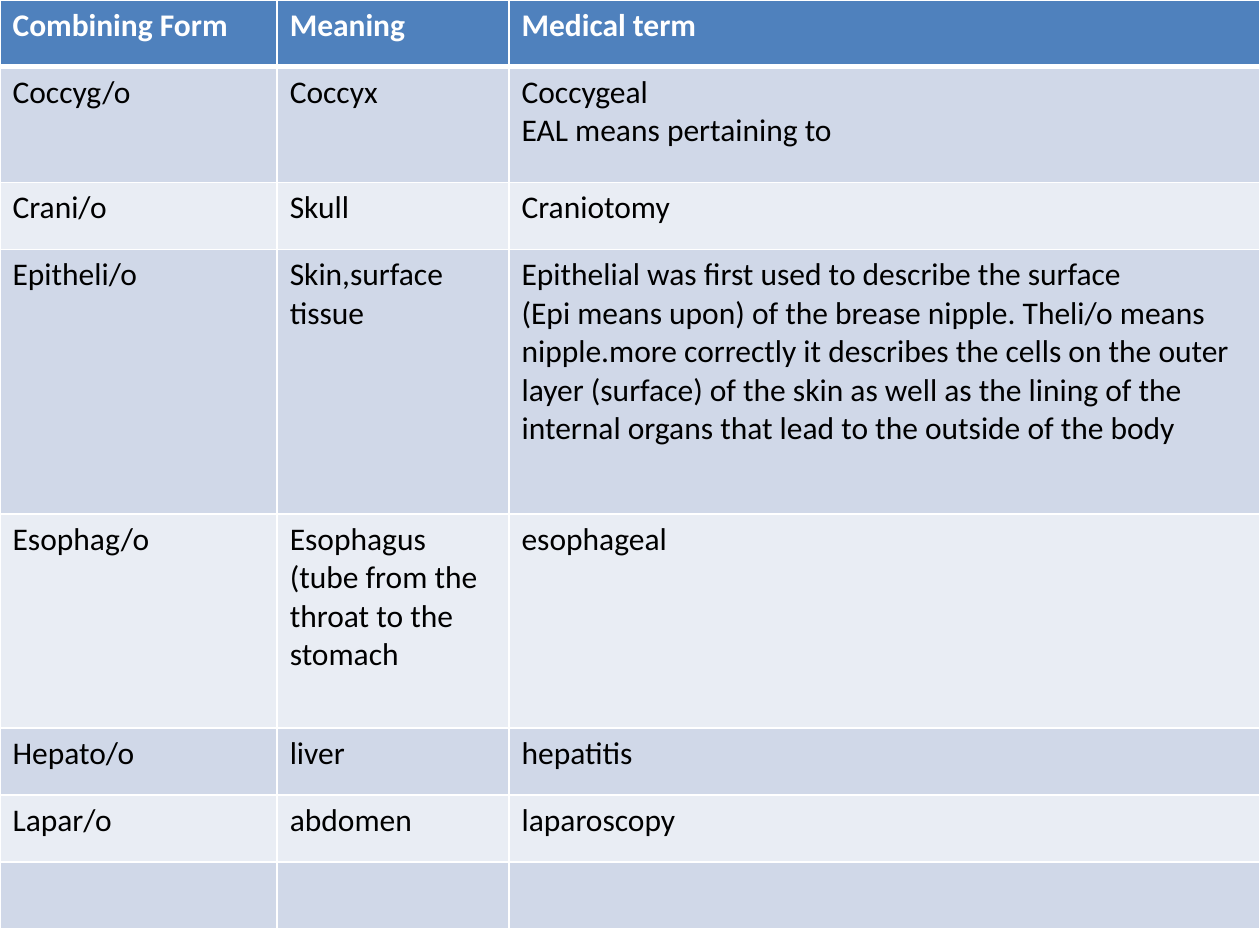
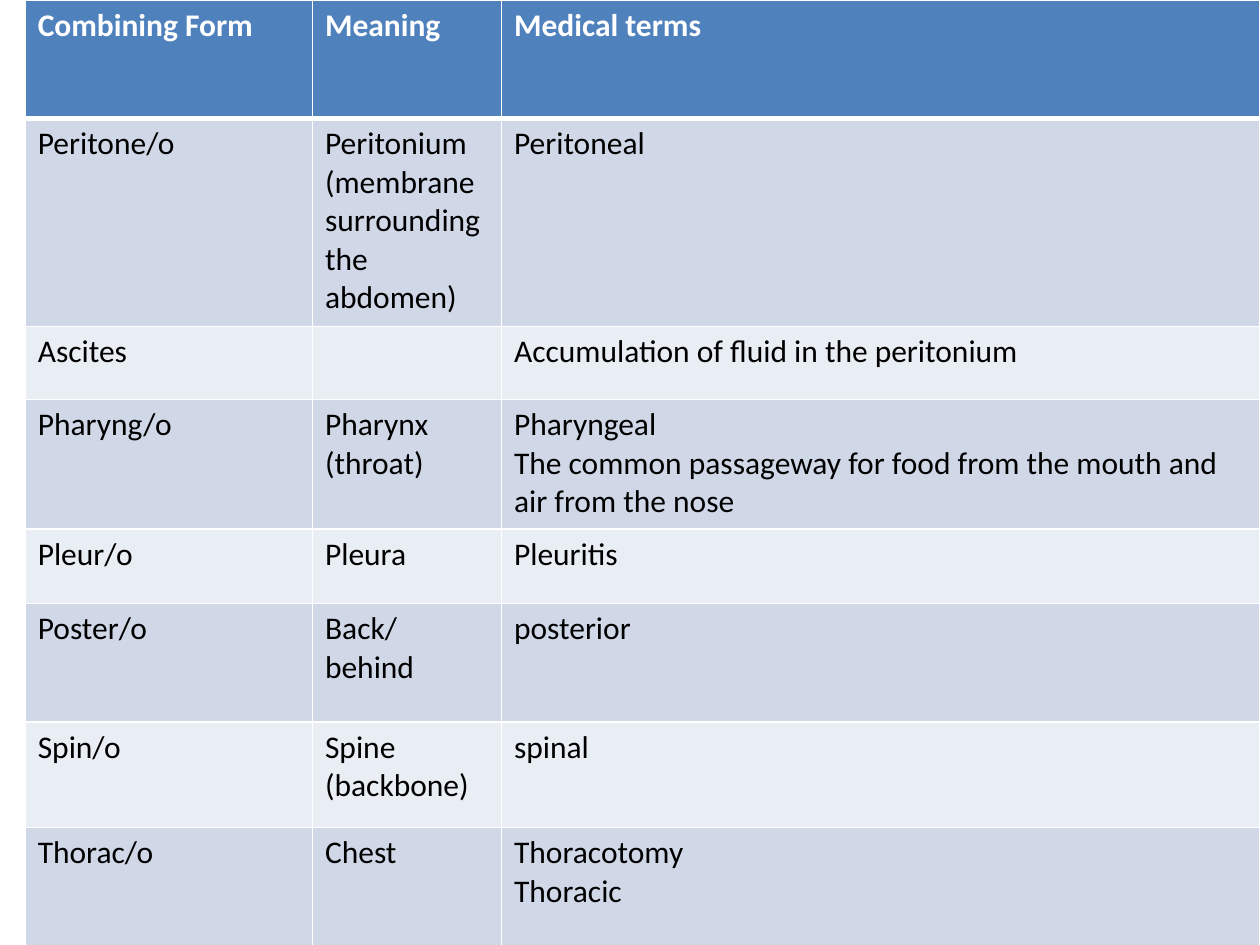
from dataclasses import dataclass
from lxml import etree
from pptx import Presentation
from pptx.dml.color import RGBColor as RGB
from pptx.oxml.ns import qn
from pptx.util import Inches, Pt


@dataclass(frozen=True)
class Theme:
    font: str = "Calibri"
    size: int = 18
    header: str = "4F81BD"
    bands: tuple = ("D0D8E8", "E9EDF4")
    white: str = "FFFFFF"
    black: str = "000000"
    rule: int = 1
    header_rule: int = 3


theme = Theme()


def add_border(cell, side, width):
    ln = etree.SubElement(cell._tc.get_or_add_tcPr(), qn(f"a:ln{side}"), w=str(Pt(width)))
    fill = etree.SubElement(ln, qn("a:solidFill"))
    etree.SubElement(fill, qn("a:srgbClr"), val=theme.white)


def add_term_table(s, left, widths, heights, rows):
    tbl = s.shapes.add_table(
        len(rows), len(widths), Inches(left), 0,
        Inches(sum(widths)), Inches(sum(heights)),
    ).table
    for col, width in zip(tbl.columns, widths):
        col.width = Inches(width)
    for i, (row, height, texts) in enumerate(zip(tbl.rows, heights, rows)):
        row.height = Inches(height)
        is_header = i == 0
        for cell, text in zip(row.cells, texts):
            add_border(cell, "L", theme.rule)
            add_border(cell, "R", theme.rule)
            add_border(cell, "T", theme.header_rule if i == 1 else theme.rule)
            add_border(cell, "B", theme.header_rule if is_header else theme.rule)
            cell.fill.solid()
            cell.fill.fore_color.rgb = RGB.from_string(
                theme.header if is_header else theme.bands[(i - 1) % 2])
            cell.text = text
            for p in cell.text_frame.paragraphs:
                p.font.name = theme.font
                p.font.size = Pt(theme.size)
                p.font.bold = is_header
                p.font.color.rgb = RGB.from_string(
                    theme.white if is_header else theme.black)


prs = Presentation()
prs.slide_width = Inches(10)
prs.slide_height = Inches(7.5)
blank = prs.slide_layouts[6]

s = prs.slides.add_slide(blank)
add_term_table(
    s, 0, [2.2, 1.84, 5.96],
    [0.53, 0.92, 0.53, 2.1, 1.7, 0.53, 0.53, 0.53],
    [
        ("Combining Form", "Meaning", "Medical term"),
        ("Coccyg/o", "Coccyx", "Coccygeal\nEAL means pertaining to"),
        ("Crani/o", "Skull", "Craniotomy"),
        ("Epitheli/o", "Skin,surface tissue",
         "Epithelial was first used to describe the surface\n"
         "(Epi means upon) of the brease nipple. Theli/o means nipple.more "
         "correctly it describes the cells on the outer layer (surface) of the "
         "skin as well as the lining of the internal organs that lead to the "
         "outside of the body"),
        ("Esophag/o", "Esophagus (tube from the throat to the stomach", "esophageal"),
        ("Hepato/o", "liver", "hepatitis"),
        ("Lapar/o", "abdomen", "laparoscopy"),
        ("", "", ""),
    ],
)

s = prs.slides.add_slide(blank)
add_term_table(
    s, 0.2, [2.28, 1.5, 6.02],
    [0.94, 1.65, 0.58, 1.03, 0.59, 0.94, 0.84, 0.94],
    [
        ("Combining Form", "Meaning", "Medical terms"),
        ("Peritone/o", "Peritonium (membrane surrounding the abdomen)", "Peritoneal"),
        ("Ascites", "", "Accumulation of fluid in the peritonium"),
        ("Pharyng/o", "Pharynx (throat)",
         "Pharyngeal\nThe common passageway for food from the mouth and air from the nose"),
        ("Pleur/o", "Pleura", "Pleuritis"),
        ("Poster/o", "Back/ behind", "posterior"),
        ("Spin/o", "Spine (backbone)", "spinal"),
        ("Thorac/o", "Chest", "Thoracotomy\nThoracic"),
    ],
)

prs.save("out.pptx")
